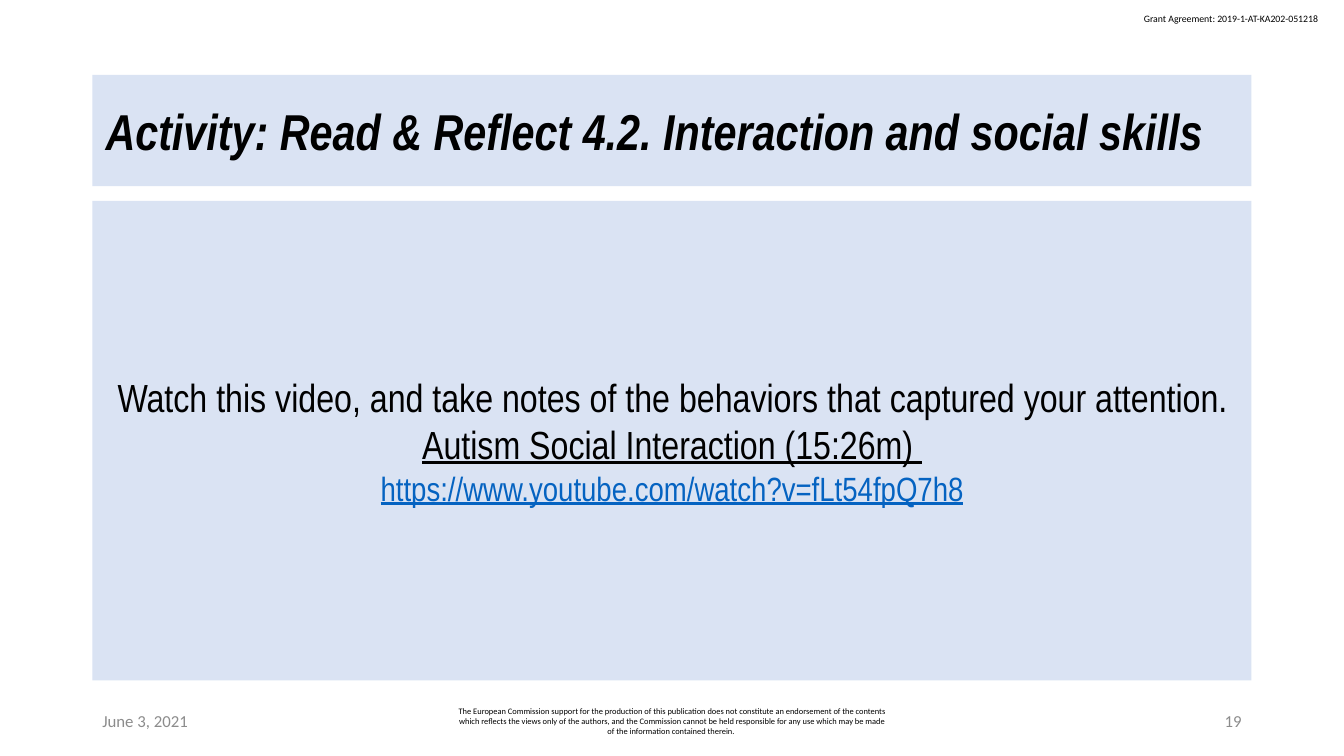
"""Build the activity slide on interaction and social skills."""
import dataclasses

import pptx
import pptx.dml.color
import pptx.enum.shapes
import pptx.enum.text
import pptx.util

Pt = pptx.util.Pt
Align = pptx.enum.text.PP_ALIGN
Anchor = pptx.enum.text.MSO_ANCHOR


@dataclasses.dataclass(frozen=True)
class Theme:
    panel: str = "DAE3F3"
    ink: str = "000000"
    muted: str = "8C8C8C"
    link: str = "0563C1"
    display: str = "Arial Narrow"
    small: str = "Calibri"
    title_size: int = 36
    body_size: int = 28
    link_size: int = 24
    footer_size: int = 12
    grant_size: int = 7
    notice_size: int = 6


THEME = Theme()
LEFT, WIDTH = 66, 828
FOOTER_TOP, FOOTER_HEIGHT = 500.5, 28.8


def write_span(para, text, font, size, color=THEME.ink, **styles):
    span = para.add_run()
    span.text = text
    span.font.name = font
    span.font.size = Pt(size)
    span.font.color.rgb = pptx.dml.color.RGBColor.from_string(color)
    for style, value in styles.items():
        setattr(span.font, style, value)


def add_label(page, left, top, width, height, text, size, color=THEME.ink,
              align=Align.LEFT, anchor=Anchor.MIDDLE, wrap=True):
    box = page.shapes.add_textbox(Pt(left), Pt(top), Pt(width), Pt(height))
    frame = box.text_frame
    frame.word_wrap = wrap
    frame.vertical_anchor = anchor
    para = frame.paragraphs[0]
    para.alignment = align
    write_span(para, text, THEME.small, size, color)


def add_panel(page, top, height, align, lines):
    panel = page.shapes.add_shape(
        pptx.enum.shapes.MSO_SHAPE.RECTANGLE,
        Pt(LEFT), Pt(top), Pt(WIDTH), Pt(height))
    panel.shadow.inherit = False
    panel.fill.solid()
    panel.fill.fore_color.rgb = pptx.dml.color.RGBColor.from_string(THEME.panel)
    panel.line.fill.background()
    frame = panel.text_frame
    frame.word_wrap = True
    frame.vertical_anchor = Anchor.MIDDLE
    frame.margin_left = frame.margin_right = Pt(9.4)
    frame.margin_top = frame.margin_bottom = Pt(5)
    for index, (text, size, styles) in enumerate(lines):
        para = frame.add_paragraph() if index else frame.paragraphs[0]
        para.alignment = align
        write_span(para, text, THEME.display, size, **styles)


def add_footer(page):
    notice = (
        "The European Commission support for the production of this publication "
        "does not constitute an endorsement of the contents which reflects the "
        "views only of the authors, and the Commission cannot be held responsible "
        "for any use which may be made of the information contained therein. ")
    parts = [
        (LEFT, 216, "June 3, 2021", THEME.footer_size, THEME.muted, Align.LEFT),
        (318, 324, notice, THEME.notice_size, THEME.ink, Align.CENTER),
        (678, 216, "19", THEME.footer_size, THEME.muted, Align.RIGHT),
    ]
    for left, width, text, size, color, align in parts:
        add_label(page, left, FOOTER_TOP, width, FOOTER_HEIGHT,
                  text, size, color, align)


def main():
    deck = pptx.Presentation()
    deck.slide_width, deck.slide_height = Pt(960), Pt(540)
    page = deck.slides.add_slide(deck.slide_layouts[6])
    add_label(page, 810, 5.8, 142, 15.8,
              "Grant Agreement: 2019-1-AT-KA202-051218",
              THEME.grant_size, anchor=Anchor.TOP, wrap=False)
    add_footer(page)
    add_panel(page, 53.5, 79.5, Align.LEFT, [
        ("Activity: Read & Reflect 4.2. Interaction and social skills",
         THEME.title_size, {"bold": True, "italic": True}),
    ])
    add_panel(page, 143.5, 342.5, Align.CENTER, [
        ("Watch this video, and take notes of the behaviors that captured "
         "your attention.", THEME.body_size, {}),
        ("Autism Social Interaction (15:26m) ",
         THEME.body_size, {"underline": True}),
        ("https://www.youtube.com/watch?v=fLt54fpQ7h8",
         THEME.link_size, {"underline": True, "color": THEME.link}),
    ])
    deck.save("out.pptx")


if __name__ == "__main__":
    main()
